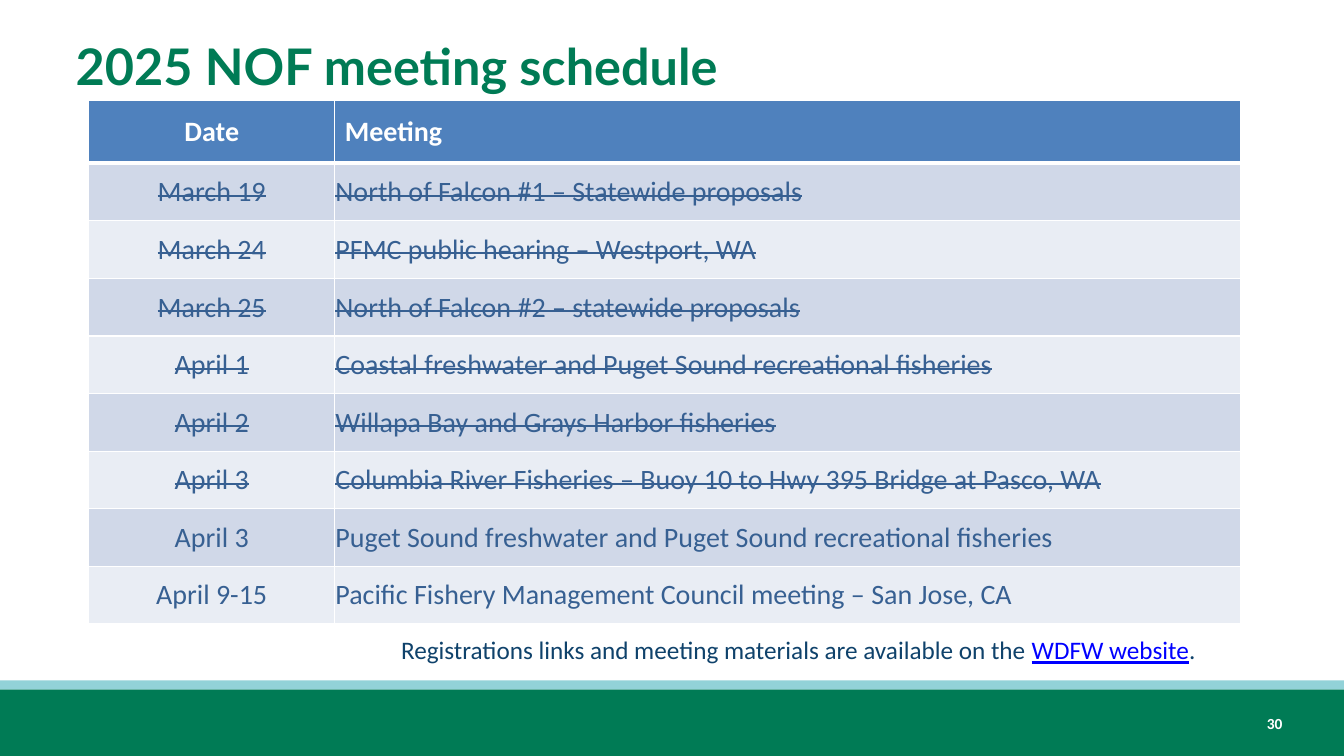
"""Build the 2025 NOF meeting schedule slide."""
from lxml import etree
from pptx import Presentation
from pptx.dml.color import RGBColor
from pptx.enum.shapes import MSO_SHAPE
from pptx.enum.text import MSO_ANCHOR, PP_ALIGN
from pptx.oxml.ns import qn
from pptx.util import Pt

RECTANGLE = MSO_SHAPE.RECTANGLE
MIDDLE, TOP = MSO_ANCHOR.MIDDLE, MSO_ANCHOR.TOP
LEFT, CENTER, RIGHT = PP_ALIGN.LEFT, PP_ALIGN.CENTER, PP_ALIGN.RIGHT

GREEN = RGBColor(0x00, 0x7B, 0x55)
AQUA = RGBColor(0x92, 0xD2, 0xD8)
WHITE = RGBColor(0xFF, 0xFF, 0xFF)
HEADER_BLUE = RGBColor(0x4F, 0x81, 0xBD)
BANDS = [RGBColor(0xD0, 0xD8, 0xE8), RGBColor(0xE9, 0xED, 0xF4)]
TEXT_BLUE = RGBColor(0x37, 0x60, 0x92)
NAVY = RGBColor(0x0F, 0x42, 0x6B)
LINK_BLUE = RGBColor(0x00, 0x00, 0xFF)

TITLE = "2025 NOF meeting schedule"
HEADINGS = ("Date", "Meeting")
PAST_MEETINGS = [
    ("March 19", "North of Falcon #1 – Statewide proposals"),
    ("March 24", "PFMC public hearing – Westport, WA"),
    ("March 25", "North of Falcon #2 – statewide proposals"),
    ("April 1", "Coastal freshwater and Puget Sound recreational fisheries"),
    ("April 2", "Willapa Bay and Grays Harbor fisheries"),
    ("April 3", "Columbia River Fisheries – Buoy 10 to Hwy 395 Bridge at Pasco, WA"),
]
COMING_MEETINGS = [
    ("April 3", "Puget Sound freshwater and Puget Sound recreational fisheries"),
    ("April 9-15", "Pacific Fishery Management Council meeting – San Jose, CA"),
]
NOTE = [
    ("Registrations links and meeting materials are available on the ", NAVY, False),
    ("WDFW website", LINK_BLUE, True),
    (".", NAVY, False),
]
PAGE_NUMBER = "30"

PAGE_WIDTH, PAGE_HEIGHT = 960, 540
FOOTER_BANDS = [(492.5, 47.5, GREEN), (486, 6.5, AQUA)]
TABLE_LEFT, TABLE_TOP = 63.4, 71.6
COLUMN_WIDTHS = (175.7, 647.3)
HEADER_HEIGHT, ROW_HEIGHT = 45, 41.15
HEADER_MARGINS = (7.2, 3.6, 7.2, 3.6)
ROW_MARGINS = (0.5, 0.5, 0.5, 0)


def set_values(target, values):
    for name, value in values.items():
        setattr(target, name, value)


def add_span(para, text, size, color, face="Calibri", **styles):
    span = para.add_run()
    span.text = text
    set_values(span.font, {"name": face, "size": Pt(size), **styles})
    span.font.color.rgb = color
    return span


def set_margins(target, margins):
    sides = ("margin_left", "margin_top", "margin_right", "margin_bottom")
    set_values(target, {side: Pt(size) for side, size in zip(sides, margins)})


def add_borders(cell, top, bottom):
    properties = cell._tc.get_or_add_tcPr()
    for tag, width in (("lnL", 1), ("lnR", 1), ("lnT", top), ("lnB", bottom)):
        line = etree.SubElement(properties, qn(f"a:{tag}"), w=str(Pt(width)))
        fill = etree.SubElement(line, qn("a:solidFill"))
        etree.SubElement(fill, qn("a:srgbClr"), val=str(WHITE))


def add_text_box(page, left, top, width, height):
    box = page.shapes.add_textbox(Pt(left), Pt(top), Pt(width), Pt(height))
    box.text_frame.word_wrap = True
    return box.text_frame.paragraphs[0]


def add_footer(page):
    for top, height, color in FOOTER_BANDS:
        band = page.shapes.add_shape(RECTANGLE, 0, Pt(top), Pt(PAGE_WIDTH), Pt(height))
        band.shadow.inherit = False
        band.fill.solid()
        band.fill.fore_color.rgb = color
        band.line.fill.background()
    para = add_text_box(page, 866.9, 506.2, 56.2, 20.6)
    para.alignment = RIGHT
    add_span(para, PAGE_NUMBER, 11, WHITE, bold=True)


def add_title(page):
    title = page.shapes.title
    set_values(title, {"left": Pt(46.8), "top": Pt(12.2), "width": Pt(865.4), "height": Pt(68.4)})
    set_values(title.text_frame, {"vertical_anchor": MIDDLE, "word_wrap": True})
    para = title.text_frame.paragraphs[0]
    para.alignment = LEFT
    add_span(para, TITLE, 36, GREEN, "Lato", bold=True)


def add_schedule(page):
    rows = [HEADINGS] + PAST_MEETINGS + COMING_MEETINGS
    height = HEADER_HEIGHT + ROW_HEIGHT * (len(rows) - 1)
    table = page.shapes.add_table(
        len(rows), len(HEADINGS), Pt(TABLE_LEFT), Pt(TABLE_TOP), Pt(sum(COLUMN_WIDTHS)), Pt(height)
    ).table
    for column, width in zip(table.columns, COLUMN_WIDTHS):
        column.width = Pt(width)
    for row_index, texts in enumerate(rows):
        header = row_index == 0
        past = 0 < row_index <= len(PAST_MEETINGS)
        table.rows[row_index].height = Pt(HEADER_HEIGHT if header else ROW_HEIGHT)
        for column_index, text in enumerate(texts):
            cell = table.cell(row_index, column_index)
            add_borders(cell, 3 if row_index == 1 else 1, 3 if header else 1)
            cell.fill.solid()
            cell.fill.fore_color.rgb = HEADER_BLUE if header else BANDS[(row_index - 1) % 2]
            cell.vertical_anchor = MIDDLE
            set_margins(cell, HEADER_MARGINS if header else ROW_MARGINS)
            para = cell.text_frame.paragraphs[0]
            para.alignment = LEFT if column_index else CENTER
            span = add_span(para, text, 20, WHITE if header else TEXT_BLUE, bold=header)
            if past:
                span.font._element.set("strike", "sngStrike")


def add_note(page):
    para = add_text_box(page, 279.4, 452.2, 607, 26.6)
    para.line_spacing = 0.9
    for text, color, underline in NOTE:
        add_span(para, text, 18, color, underline=underline)


def main():
    deck = Presentation()
    set_values(deck, {"slide_width": Pt(PAGE_WIDTH), "slide_height": Pt(PAGE_HEIGHT)})
    page = deck.slides.add_slide(deck.slide_layouts[5])
    add_footer(page)
    add_title(page)
    add_schedule(page)
    add_note(page)
    deck.save("out.pptx")


if __name__ == "__main__":
    main()
